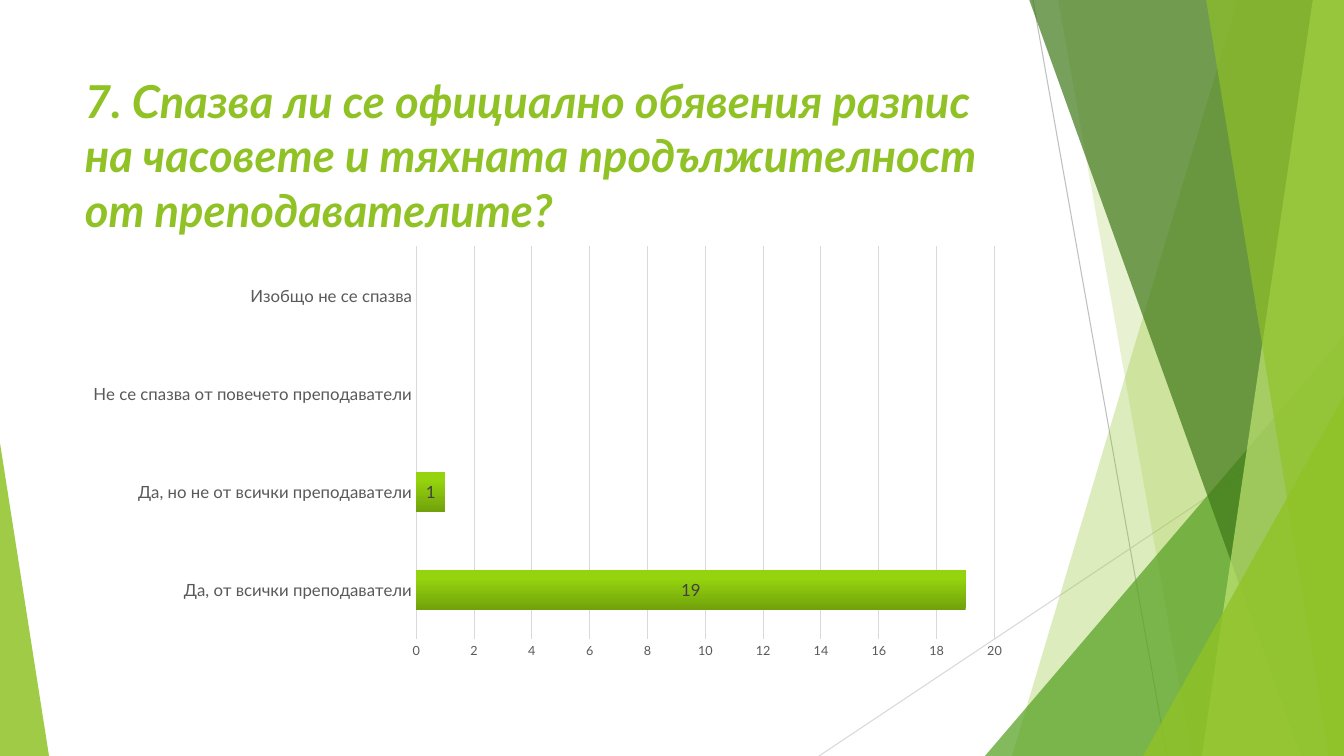
from lxml.etree import SubElement
from pptx import Presentation
from pptx.chart.data import CategoryChartData
from pptx.dml.color import RGBColor
from pptx.enum.chart import XL_CHART_TYPE, XL_LABEL_POSITION, XL_TICK_MARK
from pptx.enum.shapes import MSO_CONNECTOR, MSO_SHAPE
from pptx.enum.text import MSO_ANCHOR
from pptx.oxml import parse_xml
from pptx.oxml.ns import nsdecls, qn
from pptx.util import Emu, Pt

WIDTH, HEIGHT = 1344, 756
SCALE = 12192000 / WIDTH  # EMU in one px

LIME = RGBColor(0x90, 0xC2, 0x26)
PALE_LIME = RGBColor(0xC0, 0xE4, 0x74)
GREEN = RGBColor(0x54, 0xA0, 0x21)
DARK_GREEN = RGBColor(0x3F, 0x78, 0x19)
BAR_DARK = RGBColor(0x72, 0xA2, 0x0B)
BAR_LIGHT = RGBColor(0x94, 0xD3, 0x0E)
GREY = RGBColor(0xBF, 0xBF, 0xBF)
LIGHT_GREY = RGBColor(0xD9, 0xD9, 0xD9)
AXIS_TEXT = RGBColor(0x59, 0x59, 0x59)
LABEL_TEXT = RGBColor(0x40, 0x40, 0x40)


def px(length):
    return Emu(round(length * SCALE))


class SlideBuilder:
    def __init__(self, page, font):
        self.page = page
        self.shapes = page.shapes
        self.font = font

    def style_font(self, font, size, color):
        font.name = self.font
        font.size = Pt(size)
        font.color.rgb = color

    def paint(self, shape, color, opacity):
        shape.shadow.inherit = False
        shape.line.fill.background()
        shape.fill.solid()
        shape.fill.fore_color.rgb = color
        tint = shape.fill._xPr.find(qn("a:solidFill"))[0]
        SubElement(tint, qn("a:alpha")).set("val", str(opacity * 1000))

    def line(self, start, end, color):
        connector = self.shapes.add_connector(
            MSO_CONNECTOR.STRAIGHT, *map(px, start + end))
        connector.line.color.rgb = color
        connector.line.width = Pt(0.75)
        SubElement(connector._element.spPr, qn("a:effectLst"))

    def band(self, top_left, bottom_left, color, opacity):
        """A strip from a slanted left edge to the right side of the slide."""
        builder = self.shapes.build_freeform(top_left, -1, SCALE)
        builder.add_line_segments(
            [(WIDTH, -1), (WIDTH, HEIGHT), (bottom_left, HEIGHT)], close=True)
        self.paint(builder.convert_to_shape(), color, opacity)

    def triangle(self, left, top, width, apex, color, opacity):
        """A triangle that stands on the bottom of the slide."""
        shape = self.shapes.add_shape(
            MSO_SHAPE.ISOSCELES_TRIANGLE,
            px(left), px(top), px(width), px(HEIGHT - top))
        shape.adjustments[0] = apex
        self.paint(shape, color, opacity)

    def title(self, left, top, width, height, text, size, color):
        box = self.shapes.add_textbox(px(left), px(top), px(width), px(height))
        frame = box.text_frame
        frame.word_wrap = True
        frame.vertical_anchor = MSO_ANCHOR.TOP
        para = frame.paragraphs[0]
        span = para.add_run()
        span.text = text
        self.style_font(span.font, size, color)
        span.font.bold = span.font.italic = True

    def bar_chart(self, left, top, width, height, answers, plot):
        data = CategoryChartData()
        data.categories = list(answers)
        data.add_series("Series 1", list(answers.values()))
        chart = self.shapes.add_chart(
            XL_CHART_TYPE.BAR_STACKED,
            px(left), px(top), px(width), px(height), data).chart
        chart.has_legend = chart.has_title = False
        chart.font.name = self.font
        chart.font.size = Pt(10)

        # Bars and their values
        bars = chart.plots[0]
        bars.gap_width, bars.overlap = 150, 100
        bars.vary_by_categories = False
        fill = bars.series[0].format.fill
        fill.gradient()
        fill.gradient_angle = 90
        stops = zip(fill.gradient_stops, (0, 0.8), (BAR_DARK, BAR_LIGHT))
        for stop, position, color in stops:
            stop.position = position
            stop.color.rgb = color
        bars.has_data_labels = True
        labels = bars.data_labels
        labels.show_value = True
        labels.position = XL_LABEL_POSITION.CENTER
        self.style_font(labels.font, 12, LABEL_TEXT)

        # Axes
        for axis, size in ((chart.category_axis, 12), (chart.value_axis, 9)):
            axis.major_tick_mark = axis.minor_tick_mark = XL_TICK_MARK.NONE
            self.style_font(axis.tick_labels.font, size, AXIS_TEXT)
        chart.category_axis.format.line.color.rgb = LIGHT_GREY
        chart.category_axis.format.line.width = Pt(1)
        values = chart.value_axis
        values.minimum_scale, values.maximum_scale = 0, 20
        values.major_unit = 2
        values.format.line.fill.background()
        values.has_major_gridlines = True
        values.major_gridlines.format.line.color.rgb = LIGHT_GREY
        values.major_gridlines.format.line.width = Pt(0.75)

        # Inner plot area, as fractions of the chart
        area = chart._chartSpace.chart.plotArea
        for layout in area.findall(qn("c:layout")):
            area.remove(layout)
        modes = '<c:xMode val="edge"/><c:yMode val="edge"/>'
        sizes = "".join(f'<c:{key} val="{part}"/>'
                        for key, part in zip("xywh", plot))
        area.insert(0, parse_xml(
            f'<c:layout {nsdecls("c")}><c:manualLayout>'
            f'<c:layoutTarget val="inner"/>{modes}{sizes}'
            f'</c:manualLayout></c:layout>'))


def main():
    deck = Presentation()
    deck.slide_width, deck.slide_height = px(WIDTH), px(HEIGHT)
    slide = SlideBuilder(deck.slides.add_slide(deck.slide_layouts[6]), "Lato")

    # Decoration, from back to front
    slide.line((1033, 0), (1167, HEIGHT), GREY)
    slide.line((WIDTH, 406), (819, HEIGHT), LIGHT_GREY)
    slide.band(1238, 1012, LIME, 30)
    slide.band(1058, 1192, LIME, 20)
    slide.triangle(985, 336, 359, 1, GREEN, 72)
    slide.band(1029, 1301, DARK_GREEN, 70)
    slide.band(1313, 1202, PALE_LIME, 70)
    slide.band(1206, 1329, LIME, 65)
    slide.triangle(1143, 396, 201, 1, LIME, 80)
    slide.triangle(0, 443, 49, 0, LIME, 85)

    # Question
    slide.title(75, 68, 948, 145,
                "7. Спазва ли се официално обявения разпис на часовете и "
                "тяхната продължителност от преподавателите?", 32.4, LIME)

    # Answers
    answers = {
        "Да, от всички преподаватели": 19,
        "Да, но не от всички преподаватели": 1,
        "Не се спазва от повечето преподаватели": None,
        "Изобщо не се спазва": None,
    }
    slide.bar_chart(75, 238, 948, 427, answers, (0.36, 0.02, 0.61, 0.92))

    deck.save("out.pptx")


if __name__ == "__main__":
    main()
